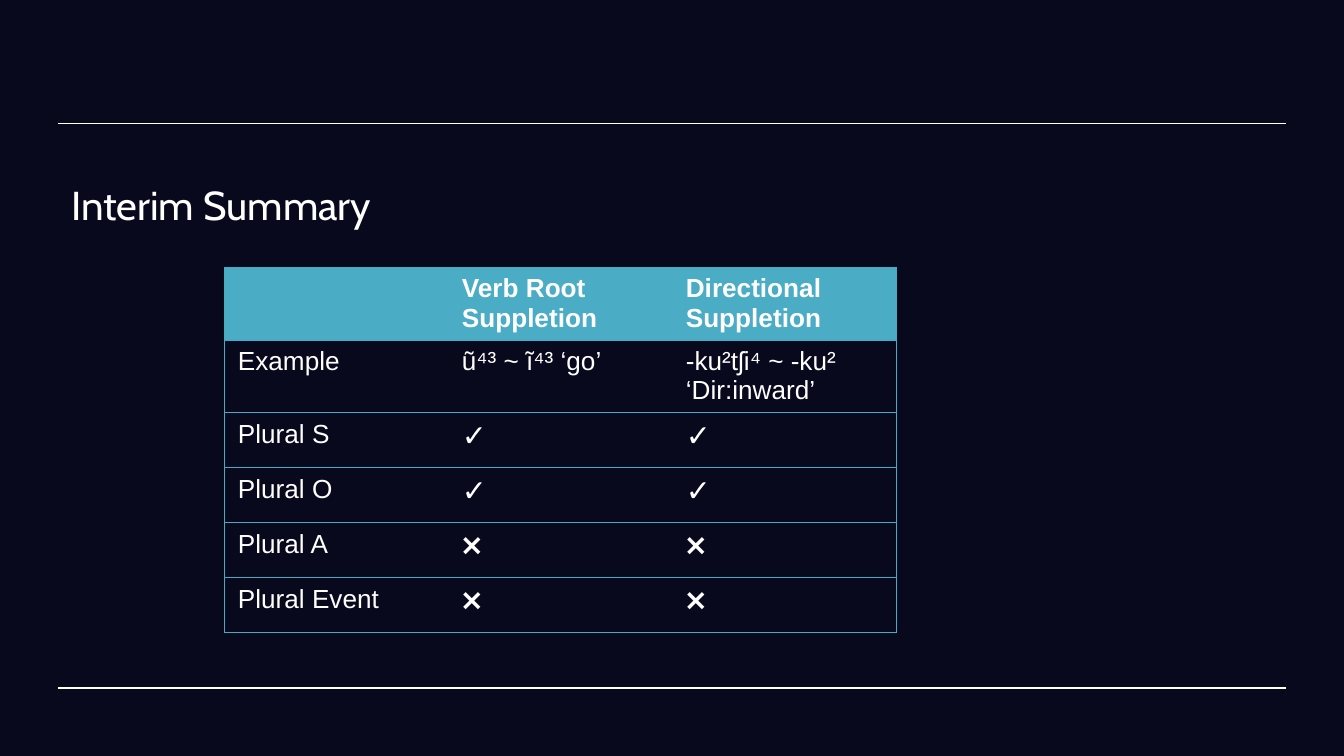
from lxml.etree import SubElement
from pptx import Presentation
from pptx.dml.color import RGBColor as RGB
from pptx.enum.text import MSO_ANCHOR as Anchor, MSO_AUTO_SIZE as AutoSize, PP_ALIGN as Align
from pptx.oxml.ns import qn
from pptx.util import Inches, Pt

COLORS = {"night": "09091E", "white": "FFFFFF", "header": "4BACC6", "grid": "46AAC5"}
SUMMARY = [
    ["", "Verb Root Suppletion", "Directional Suppletion"],
    ["Example", "ũ⁴³ ~ ĩ⁴³ ‘go’", "-ku²tʃi⁴ ~ -ku² ‘Dir:inward’"],
    ["Plural S", "✓", "✓"],
    ["Plural O", "✓", "✓"],
    ["Plural A", "❌", "❌"],
    ["Plural Event", "❌", "❌"],
]
ROW_HEIGHTS = [0.54] * 2 + [0.41] * 4


class SlideStyle:
    """Holds the colours and the current slide, and adds styled elements to it."""

    def __init__(self, slide, colors):
        self.slide = slide
        self.colors = colors
        self.paint(slide.background.fill, "night")

    def paint(self, fill, color):
        fill.solid()
        fill.fore_color.rgb = RGB.from_string(self.colors[color])

    def format_text(self, paragraph, **values):
        for name, value in values.items():
            setattr(paragraph.font, name, value)
        paragraph.font.color.rgb = RGB.from_string(self.colors["white"])

    def title(self, text, left, top, width, height):
        heading = self.slide.shapes.title
        box = {"left": left, "top": top, "width": width, "height": height}
        for name, value in box.items():
            setattr(heading, name, Inches(value))
        frame = heading.text_frame
        frame.text = text
        margins = {f"margin_{side}": Inches(0.1) for side in ("left", "top", "right", "bottom")}
        settings = {**margins, "auto_size": AutoSize.NONE,
                    "vertical_anchor": Anchor.TOP, "word_wrap": True}
        for name, value in settings.items():
            setattr(frame, name, value)
        frame.paragraphs[0].alignment = Align.LEFT
        self.format_text(frame.paragraphs[0], name="Cabin", size=Pt(21.6))

    def rule(self, left, right, y):
        line = self.slide.shapes.add_connector(1, Inches(left), Inches(y), Inches(right), Inches(y))
        self.paint(line.line.fill, "white")
        line.line.width = Pt(0.75)
        SubElement(line._element.spPr, qn("a:effectLst"))

    def borders(self, cell, visible):
        properties = cell._tc.get_or_add_tcPr()
        for side in "LRTB":
            edge = SubElement(properties, qn(f"a:ln{side}"), w=str(Pt(0.75)))
            if side in visible:
                fill = SubElement(edge, qn("a:solidFill"))
                SubElement(fill, qn("a:srgbClr"), val=self.colors["grid"])
            else:
                SubElement(edge, qn("a:noFill"))

    def table(self, rows, heights, left, top, width):
        columns = len(rows[0])
        grid = self.slide.shapes.add_table(
            len(rows), columns, Inches(left), Inches(top), Inches(width), Inches(sum(heights))
        ).table
        grid.horz_banding = False
        for row, height in zip(grid.rows, heights):
            row.height = Inches(height)
        for r, texts in enumerate(rows):
            for c, text in enumerate(texts):
                cell = grid.cell(r, c)
                outer = {0: "L", columns - 1: "R"}.get(c, "")
                self.borders(cell, "TB" + outer)
                if r == 0:
                    self.paint(cell.fill, "header")
                else:
                    cell.fill.background()
                cell.text = text
                size = Pt(16 if text in ("✓", "❌") else 14)
                self.format_text(cell.text_frame.paragraphs[0], name="Arial", size=size, bold=r == 0)


def main():
    deck = Presentation()
    deck.slide_width = Inches(10)
    deck.slide_height = Inches(10 * 9 / 16)
    style = SlideStyle(deck.slides.add_slide(deck.slide_layouts[5]), COLORS)
    for y in (0.92, 5.12):
        style.rule(0.43, 9.57, y)
    style.title("Interim Summary", 0.43, 1.24, 8.83, 0.47)
    style.table(SUMMARY, ROW_HEIGHTS, 1.67, 1.99, 5)
    deck.save("out.pptx")


if __name__ == "__main__":
    main()
